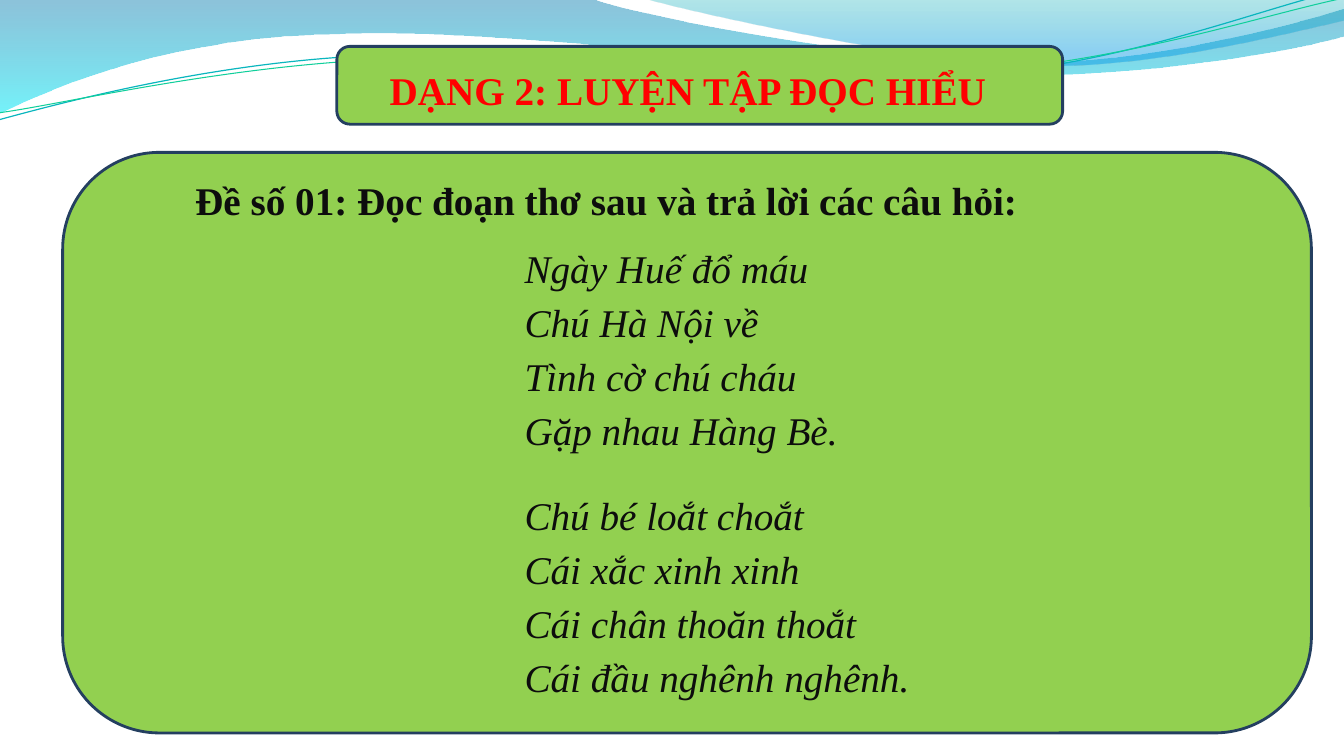
from lxml.etree import SubElement
from pptx import Presentation
from pptx.dml.color import RGBColor
from pptx.enum.shapes import MSO_SHAPE as Shape
from pptx.enum.text import MSO_AUTO_SIZE as Fit, PP_ALIGN as Align
from pptx.oxml.ns import qn
from pptx.util import Cm, Pt

BLUE = RGBColor(0x00, 0x79, 0xAD)
CYAN = RGBColor(0x00, 0xE9, 0xF7)
TEAL = RGBColor(0x00, 0xAB, 0xB4)
SKY = RGBColor(0x00, 0x99, 0xE4)
AQUA = RGBColor(0x09, 0xB6, 0xBE)
MINT = RGBColor(0x10, 0xCF, 0x9B)
GREEN = RGBColor(0x92, 0xD0, 0x50)
NAVY = RGBColor(0x24, 0x3F, 0x60)
RED = RGBColor(0xFF, 0x00, 0x00)
INK = RGBColor(0x0D, 0x0D, 0x0D)
FONT = "Times New Roman"

BROAD = [
    (0, 0), (14.91, -0.03),
    (16.1, 0.43, 22.48, 1.6, 25.68, 1.6),
    (28.91, 1.6, 32.46, 0.66, 33.86, 0.23),
    (33.91, 0.91),
    (33.3, 1.12, 29.46, 1.93, 25.25, 1.91),
    (21.06, 1.91, 12.93, 0.71, 8.71, 0.86),
    (4.37, 0.91, 1.55, 2.11, -0.03, 2.87),
]
RIGHT = [
    (16.23, -0.03),
    (17.25, 0.28, 23.09, 1.57, 26.04, 1.65),
    (28.98, 1.75, 32.56, 0.81, 33.86, 0.53),
    (33.86, 0),
]
UPPER = [
    (-0.03, 3.02),
    (1.63, 2.57, 5.36, 1.57, 9.37, 1.4),
    (13.39, 1.22, 20.07, 2.21, 24.13, 1.93),
    (28.19, 1.68, 31.8, 0.2, 33.81, -0.25),
]
LOWER = [
    (0, 2.84),
    (1.6, 2.62, 5.54, 1.68, 9.6, 1.5),
    (13.64, 1.35, 20.22, 2.08, 24.26, 1.83),
    (28.32, 1.57, 31.88, 0.36, 33.88, -0.05),
]
VERSES = [
    (5.85, 12.73, 9.12, "Ngày Huế đổ máu\vChú Hà Nội về\vTình cờ chú cháu\vGặp nhau Hàng Bè."),
    (12.07, 16.99, 5.66, "Chú bé loắt choắt\vCái xắc xinh xinh\vCái chân thoăn thoắt\vCái đầu nghênh nghênh."),
]


def bend(shape, node, part):
    node.tag = qn("a:cubicBezTo")
    for child in list(node):
        node.remove(child)
    for x, y in zip(part[::2], part[1::2]):
        point = SubElement(node, qn("a:pt"))
        point.set("x", str(Cm(x) - shape.left))
        point.set("y", str(Cm(y) - shape.top))


def add_path(slide, parts, close):
    dots = [(Cm(part[-2]), Cm(part[-1])) for part in parts]
    pen = slide.shapes.build_freeform(*dots[0])
    pen.add_line_segments(dots[1:], close=close)
    shape = pen.convert_to_shape()
    shape.shadow.inherit = False
    nodes = list(shape._element.spPr.iter(qn("a:lnTo")))
    for node, part in zip(nodes, parts[1:]):
        if len(part) == 6:
            bend(shape, node, part)
    return shape


def add_wave(slide, parts, stops):
    wave = add_path(slide, parts, True)
    wave.line.fill.background()
    wave.fill.gradient()
    wave.fill.gradient_angle = 270
    for stop, (place, color, alpha) in zip(wave.fill.gradient_stops, stops):
        stop.position = place
        stop.color.rgb = color
    for node, (place, color, alpha) in zip(wave._element.spPr.iter(qn("a:srgbClr")), stops):
        SubElement(node, qn("a:alpha")).set("val", str(alpha * 1000))


def add_curve(slide, parts, color, width):
    curve = add_path(slide, parts, False)
    curve.fill.background()
    curve.line.color.rgb = color
    curve.line.width = Pt(width)


def add_panel(slide, left, top, width, height):
    panel = slide.shapes.add_shape(Shape.ROUNDED_RECTANGLE, Cm(left), Cm(top), Cm(width), Cm(height))
    panel.shadow.inherit = False
    panel.fill.solid()
    panel.fill.fore_color.rgb = GREEN
    panel.line.color.rgb = NAVY
    panel.line.width = Pt(2)


def add_text(slide, left, top, width, height, text, color=INK, indent=0, after=10,
             bold=False, align=Align.LEFT):
    frame = slide.shapes.add_textbox(Cm(left), Cm(top), Cm(width), Cm(height)).text_frame
    frame.word_wrap = True
    frame.auto_size = Fit.NONE
    para = frame.paragraphs[0]
    para.text = text
    para.alignment = align
    para.line_spacing = 1.15
    para.space_after = Pt(after)
    props = para._p.get_or_add_pPr()
    props.set("marL", str(Cm(indent)))
    props.set("indent", "0")
    for run in para.runs:
        run.font.name = FONT
        run.font.size = Pt(28)
        run.font.bold = bold
        run.font.italic = not bold
        run.font.color.rgb = color


def main():
    deck = Presentation()
    deck.slide_width, deck.slide_height = Cm(33.87), Cm(19.05)
    slide = deck.slides.add_slide(deck.slide_layouts[6])

    add_wave(slide, BROAD, [(0, BLUE, 45), (1, CYAN, 55)])
    add_wave(slide, RIGHT, [(0, TEAL, 30), (0.8, SKY, 45)])
    add_curve(slide, UPPER, AQUA, 0.85)
    add_curve(slide, LOWER, MINT, 0.75)

    add_panel(slide, 8.49, 1.17, 18.29, 1.96)
    add_panel(slide, 1.58, 3.84, 31.47, 14.63)

    add_text(slide, 9.57, 1.37, 17.22, 1.52, "DẠNG 2: LUYỆN TẬP ĐỌC HIỂU",
             RED, after=12, bold=True, align=Align.JUSTIFY)
    for top, width, height, verse in VERSES:
        add_text(slide, 10.12, top, width, height, verse, indent=2.85)
    add_text(slide, 3.4, 4.14, 23.7, 1.52, "Đề số 01: Đọc đoạn thơ sau và trả lời các câu hỏi:",
             indent=1.27, bold=True)

    deck.save("out.pptx")


if __name__ == "__main__":
    main()
